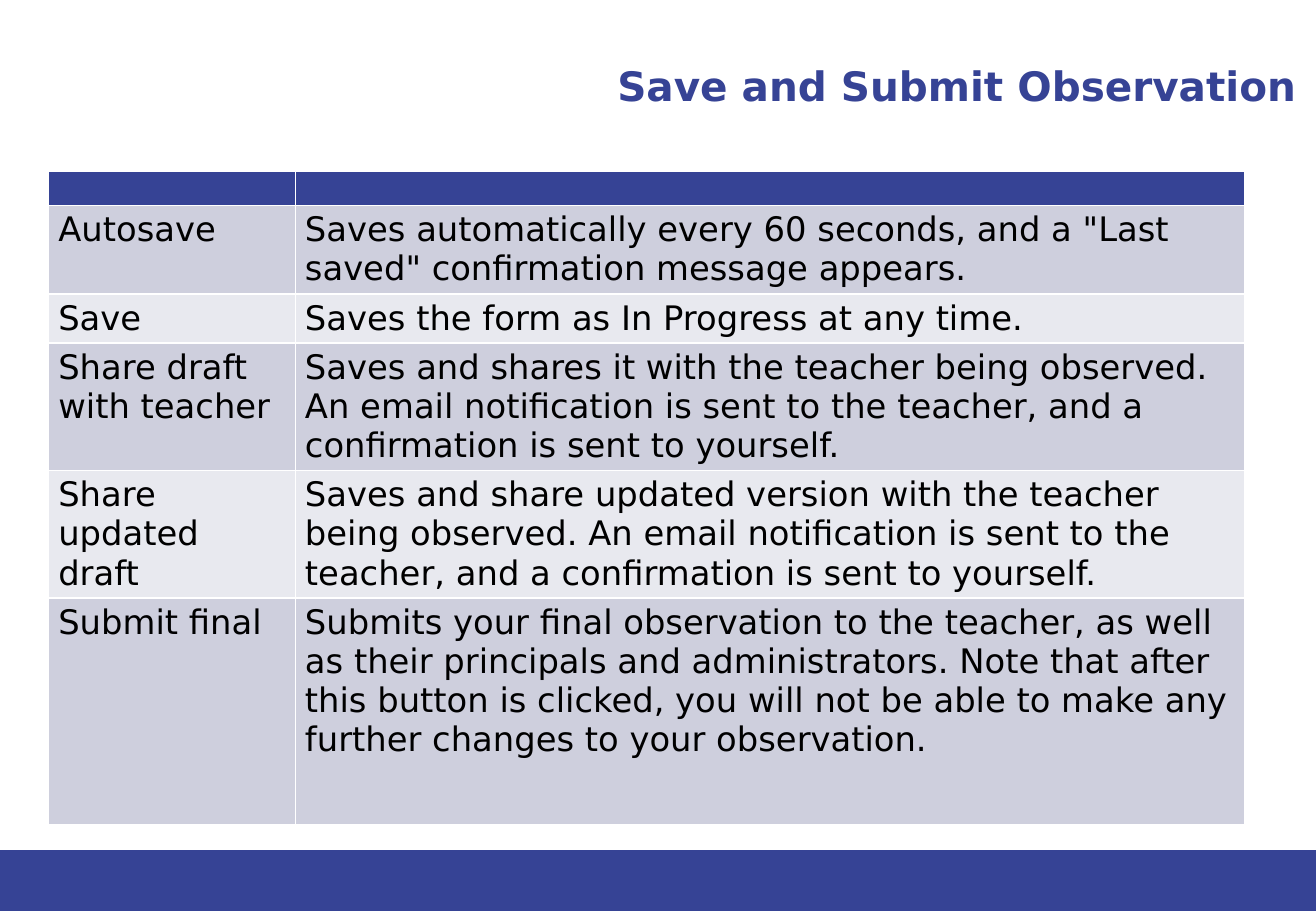
from lxml.etree import SubElement
from pptx import Presentation
from pptx.dml.color import RGBColor
from pptx.enum.shapes import MSO_SHAPE
from pptx.enum.text import MSO_ANCHOR, PP_ALIGN
from pptx.oxml import parse_xml
from pptx.oxml.ns import nsdecls, qn
from pptx.util import Inches, Pt

TITLE = "Save and Submit Observation"
ACTIONS = [
    ("Autosave",
     'Saves automatically every 60 seconds, and a "Last saved" confirmation '
     "message appears."),
    ("Save", "Saves the form as In Progress at any time."),
    ("Share draft with teacher",
     "Saves and shares it with the teacher being observed. An email "
     "notification is sent to the teacher, and a confirmation is sent to "
     "yourself."),
    ("Share updated draft",
     "Saves and share updated version with the teacher being observed. An "
     "email notification is sent to the teacher, and a confirmation is sent "
     "to yourself."),
    ("Submit final",
     "Submits your final observation to the teacher, as well as their "
     "principals and administrators. Note that after this button is clicked, "
     "you will not be able to make any further changes to your observation."),
]

BLUE = RGBColor(0x36, 0x43, 0x95)
BLACK = RGBColor(0, 0, 0)
WHITE = RGBColor(0xFF, 0xFF, 0xFF)
BANDS = [RGBColor(0xCE, 0xCF, 0xDD), RGBColor(0xE8, 0xE9, 0xEF)]

FONT = "DejaVu Sans"
TITLE_FONT = {"name": FONT, "size": Pt(24), "bold": True}
BODY_FONT = {"name": FONT, "size": Pt(20), "bold": False}
TITLE_FRAME = {
    "margin_left": 0, "margin_top": 0,
    "margin_right": Inches(0.1), "margin_bottom": Inches(0.05),
    "vertical_anchor": MSO_ANCHOR.TOP, "word_wrap": True,
}
CELL_MARGINS = {
    "margin_left": Inches(0.08), "margin_right": Inches(0.08),
    "margin_top": Inches(0.04), "margin_bottom": Inches(0.04),
}

SLIDE_WIDTH, SLIDE_HEIGHT, FOOTER_HEIGHT = 10.83, 7.5, 0.5
COLUMN_WIDTHS = [2.03, 7.81]
ROW_HEIGHTS = [0.28, 0.73, 0.4, 1.05, 1.05, 1.87]


def apply_format(target, values):
    for attribute, value in values.items():
        setattr(target, attribute, value)


def write(paragraph, text, font_values, color):
    run = paragraph.add_run()
    run.text = text
    apply_format(run.font, font_values)
    run.font.color.rgb = color


def style_cell(cell, color):
    """Fill the cell and draw a thin white border on all four sides."""
    cell.fill.solid()
    cell.fill.fore_color.rgb = color
    apply_format(cell, CELL_MARGINS)
    properties = cell._tc.get_or_add_tcPr()
    for position, side in enumerate(("lnL", "lnR", "lnT", "lnB")):
        properties.insert(position, parse_xml(
            f'<a:{side} {nsdecls("a")} w="{Pt(1)}"><a:solidFill>'
            f'<a:srgbClr val="{WHITE}"/></a:solidFill></a:{side}>'))


def add_title(slide):
    title = slide.shapes.title
    apply_format(title, {"left": Inches(5.08), "top": Inches(0.5),
                         "width": Inches(5.75), "height": Inches(0.67)})
    apply_format(title.text_frame, TITLE_FRAME)
    heading = title.text_frame.paragraphs[0]
    heading.alignment = PP_ALIGN.LEFT
    write(heading, TITLE, TITLE_FONT, BLUE)


def add_footer(slide):
    footer = slide.shapes.add_shape(
        MSO_SHAPE.RECTANGLE, 0, Inches(SLIDE_HEIGHT - FOOTER_HEIGHT),
        Inches(SLIDE_WIDTH), Inches(FOOTER_HEIGHT))
    footer.shadow.inherit = False
    footer.fill.solid()
    footer.fill.fore_color.rgb = BLUE
    footer.line.fill.background()


def add_actions(slide):
    table = slide.shapes.add_table(
        len(ROW_HEIGHTS), len(COLUMN_WIDTHS), Inches(0.4), Inches(1.41),
        Inches(sum(COLUMN_WIDTHS)), Inches(sum(ROW_HEIGHTS))).table
    for column, width in zip(table.columns, COLUMN_WIDTHS):
        column.width = Inches(width)
    for row, height in zip(table.rows, ROW_HEIGHTS):
        row.height = Inches(height)

    for header in table.rows[0].cells:
        style_cell(header, BLUE)
        # A small size keeps the empty header row at its set height.
        SubElement(header.text_frame.paragraphs[0]._p,
                   qn("a:endParaRPr"), sz="1000")
    for index, action in enumerate(ACTIONS):
        for cell, text in zip(table.rows[index + 1].cells, action):
            style_cell(cell, BANDS[index % len(BANDS)])
            write(cell.text_frame.paragraphs[0], text, BODY_FONT, BLACK)


def main():
    presentation = Presentation()
    presentation.slide_width = Inches(SLIDE_WIDTH)
    presentation.slide_height = Inches(SLIDE_HEIGHT)
    slide = presentation.slides.add_slide(presentation.slide_layouts[5])
    add_footer(slide)
    add_title(slide)
    add_actions(slide)
    presentation.save("out.pptx")


if __name__ == "__main__":
    main()
